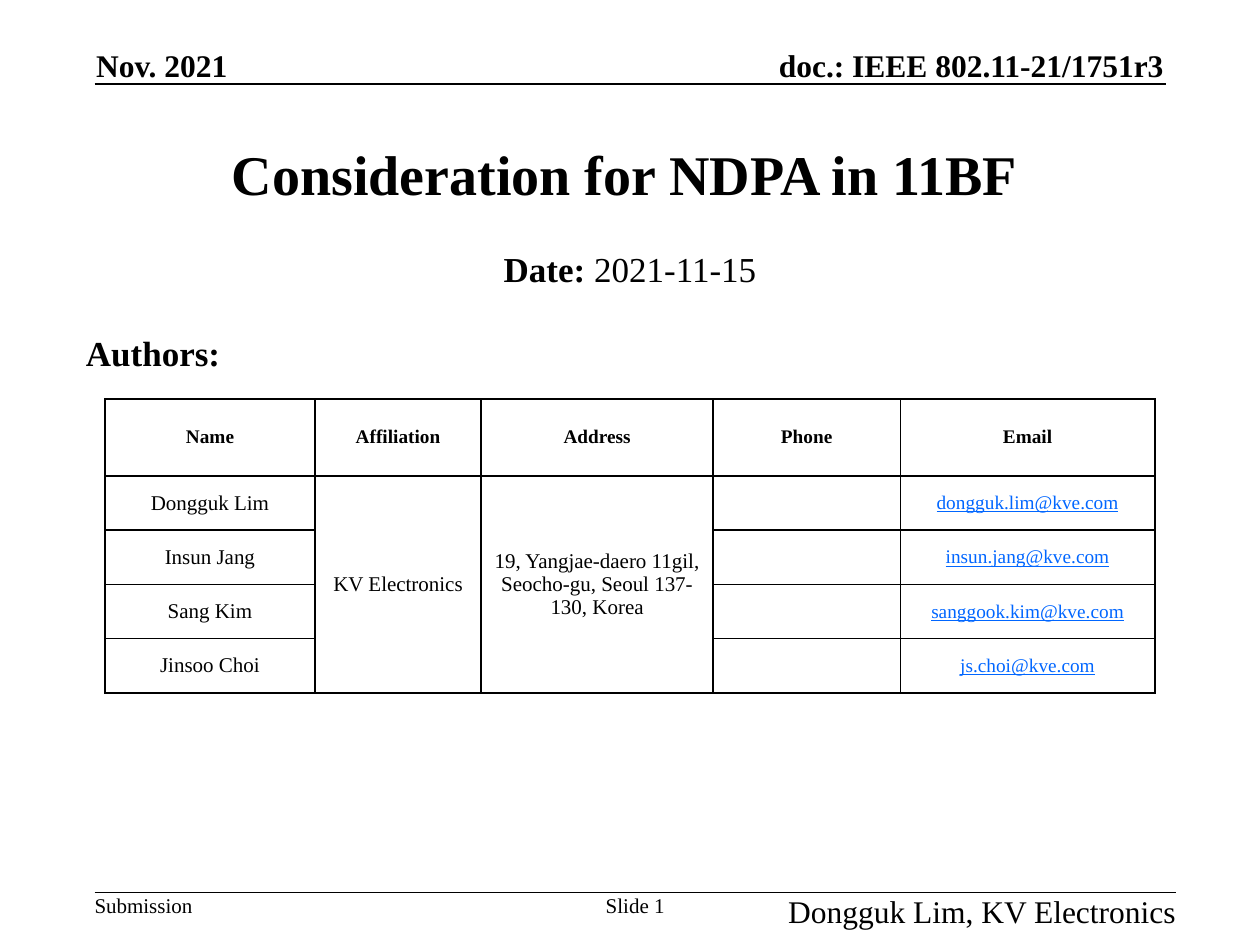
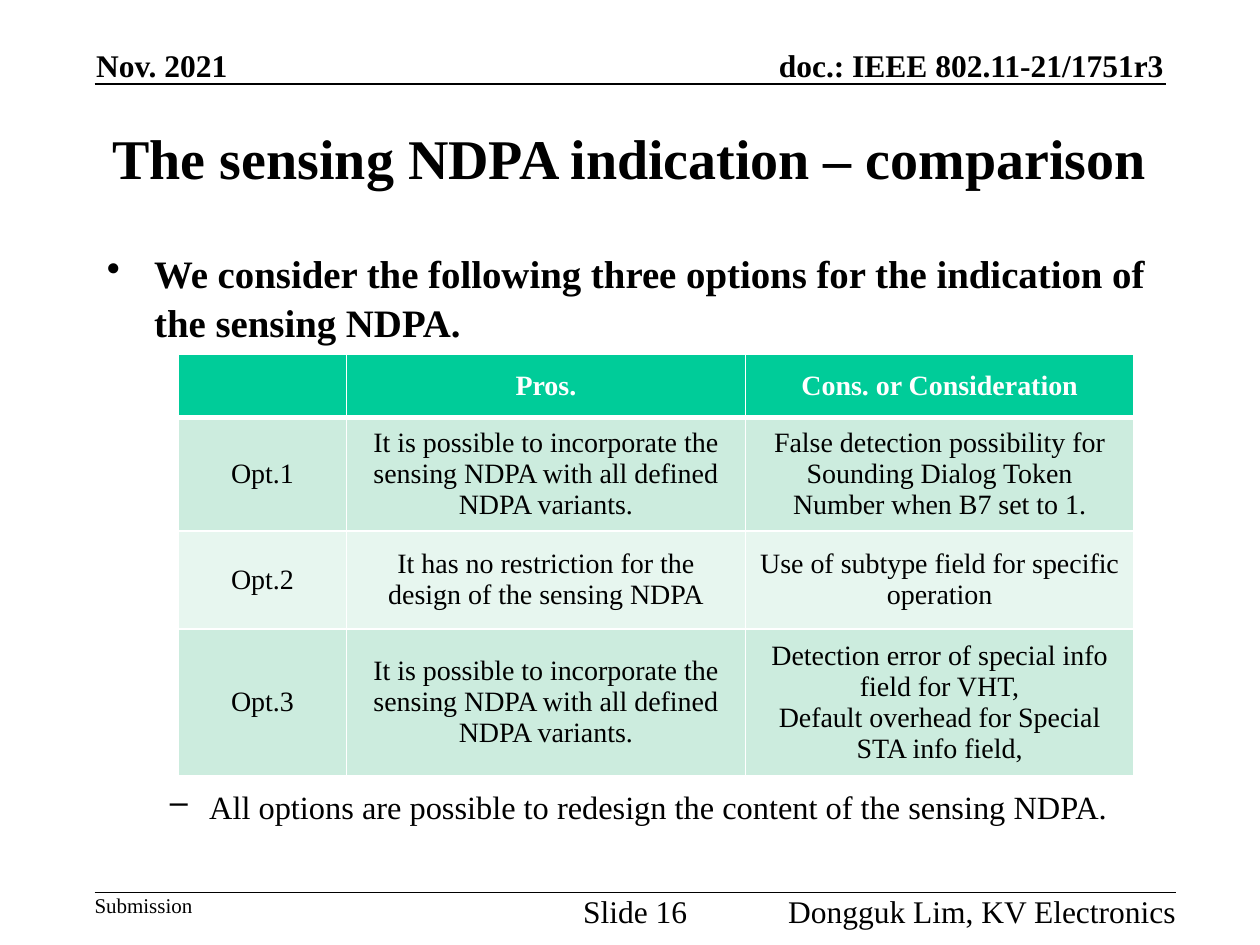
from lxml import etree
from pptx import Presentation
from pptx.dml.color import RGBColor
from pptx.enum.shapes import MSO_CONNECTOR
from pptx.enum.text import MSO_ANCHOR, PP_ALIGN
from pptx.oxml.ns import qn
from pptx.util import Pt

LEFT, CENTER, RIGHT = PP_ALIGN.LEFT, PP_ALIGN.CENTER, PP_ALIGN.RIGHT
TOP, MIDDLE, BOTTOM = MSO_ANCHOR.TOP, MSO_ANCHOR.MIDDLE, MSO_ANCHOR.BOTTOM
STRAIGHT = MSO_CONNECTOR.STRAIGHT

FONT = "Times New Roman"
BLACK, WHITE, LINK = "000000", "FFFFFF", "0066FF"
GREEN, BAND_DARK, BAND_LIGHT = "00CC99", "CCECDE", "E7F6EF"
PADDING = (7.2, 3.6)
NO_PADDING = (0, 0)

AUTHORS = [
    ("Dongguk Lim", "dongguk.lim@kve.com"),
    ("Insun Jang", "insun.jang@kve.com"),
    ("Sang Kim", "sanggook.kim@kve.com"),
    ("Jinsoo Choi", "js.choi@kve.com"),
]
AFFILIATION = "KV Electronics"
ADDRESS = "19, Yangjae-daero 11gil, Seocho-gu, Seoul 137-130, Korea"

ALL_VARIANTS = ("It is possible to incorporate the sensing NDPA "
                "with all defined NDPA variants.")
OPTIONS = [
    ("", "Pros.", "Cons. or Consideration"),
    ("Opt.1", ALL_VARIANTS,
     "False detection possibility for Sounding Dialog Token Number when B7 set to 1."),
    ("Opt.2", "It has no restriction for the design of the sensing NDPA",
     "Use of subtype field for specific operation"),
    ("Opt.3", ALL_VARIANTS,
     "Detection error of special info field for VHT,\n"
     "Default overhead for Special STA info field,"),
]


def rgb(color):
    return RGBColor.from_string(color)


def add_run(paragraph, text, size=12, bold=False, color=BLACK, underline=False):
    run = paragraph.add_run()
    run.text = text
    font = run.font
    font.name, font.size, font.bold = FONT, Pt(size), bold
    font.underline = underline
    font.color.rgb = rgb(color)


def write_text(frame, text, align=LEFT, before=0, **font):
    """Write one paragraph per line of text and return the last one."""
    for index, line in enumerate(text.split("\n")):
        paragraph = frame.add_paragraph() if index else frame.paragraphs[0]
        paragraph.alignment = align
        paragraph.space_before = Pt(before)
        add_run(paragraph, line, **font)
    return paragraph


def add_text(slide, text, box, anchor=TOP, padding=PADDING, **text_format):
    frame = slide.shapes.add_textbox(*map(Pt, box)).text_frame
    frame.word_wrap = True
    frame.vertical_anchor = anchor
    frame.margin_left = frame.margin_right = Pt(padding[0])
    frame.margin_top = frame.margin_bottom = Pt(padding[1])
    return write_text(frame, text, **text_format)


def add_bullet(slide, text, box, character, indent, hanging, **text_format):
    paragraph = add_text(slide, text, box, **text_format)
    properties = paragraph._p.get_or_add_pPr()
    properties.set("marL", str(Pt(indent)))
    properties.set("indent", str(-Pt(hanging)))
    etree.SubElement(properties, qn("a:buChar"), char=character)
    return paragraph


def add_rule(slide, left, right, top):
    rule = slide.shapes.add_connector(STRAIGHT, Pt(left), Pt(top), Pt(right), Pt(top))
    rule.line.color.rgb = rgb(BLACK)
    rule.line.width = Pt(1)
    etree.SubElement(rule._element.spPr, qn("a:effectLst"))


def add_header(slide, left=54, right=666, bottom=48):
    style = dict(anchor=BOTTOM, padding=NO_PADDING, size=18, bold=True)
    add_text(slide, "Nov. 2021", (left + 1, bottom - 22, 90, 22), **style)
    add_text(slide, "doc.: IEEE 802.11-21/1751r3",
             (right - 266, bottom - 22, 265, 22), align=RIGHT, **style)
    add_rule(slide, left, right, bottom)


def add_footer(slide, number, number_size, left=54, right=672, top=510):
    add_rule(slide, left, right, top)
    add_text(slide, "Submission", (left, top, 70, 14), padding=NO_PADDING)
    add_text(slide, f"Slide {number}", (left + 266, top, 86, 22),
             padding=NO_PADDING, align=CENTER, size=number_size)
    add_text(slide, f"Dongguk Lim, {AFFILIATION}", (right - 230, top, 230, 22),
             padding=NO_PADDING, align=RIGHT, size=18)


def add_base_slide(presentation, title, title_box, number, number_size):
    """Add a blank slide with the shared header, title and footer."""
    slide = presentation.slides.add_slide(presentation.slide_layouts[6])
    add_header(slide)
    add_text(slide, title, title_box, anchor=MIDDLE, align=CENTER, size=32, bold=True)
    add_footer(slide, number, number_size)
    return slide


def add_grid(slide, left, top, widths, heights):
    table = slide.shapes.add_table(
        len(heights), len(widths), Pt(left), Pt(top),
        Pt(sum(widths)), Pt(sum(heights))).table
    table.first_row = table.horz_banding = False
    for column, width in zip(table.columns, widths):
        column.width = Pt(width)
    for row, height in zip(table.rows, heights):
        row.height = Pt(height)
    return table


def style_cell(cell, fill, border, padding=PADDING, top=1, bottom=1):
    """Set fill, margins and border; top and bottom are border widths."""
    properties = cell._tc.get_or_add_tcPr()
    for side, width in (("L", 1), ("R", 1), ("T", top), ("B", bottom)):
        line = etree.SubElement(properties, qn(f"a:ln{side}"), w=str(Pt(width)))
        solid = etree.SubElement(line, qn("a:solidFill"))
        etree.SubElement(solid, qn("a:srgbClr"), val=border)
    cell.fill.solid()
    cell.fill.fore_color.rgb = rgb(fill)
    cell.vertical_anchor = MIDDLE
    cell.margin_left = cell.margin_right = Pt(padding[0])
    cell.margin_top = cell.margin_bottom = Pt(padding[1])


def write_cell(cell, text, **font):
    if text:
        write_text(cell.text_frame, text, align=CENTER, **font)


def add_author_table(slide, left, top):
    table = add_grid(slide, left, top, [120, 95, 132.5, 107, 145.5],
                     [44] + [31] * len(AUTHORS))
    for row_index, row in enumerate(table.rows):
        for cell in row.cells:
            style_cell(cell, WHITE, BLACK, (5, 0) if row_index else PADDING)
    for column, heading in enumerate(("Name", "Affiliation", "Address", "Phone", "Email")):
        write_cell(table.cell(0, column), heading, size=11, bold=True)
    for column, text in ((1, AFFILIATION), (2, ADDRESS)):
        table.cell(1, column).merge(table.cell(len(AUTHORS), column))
        write_cell(table.cell(1, column), text)
    for row_index, (name, email) in enumerate(AUTHORS, start=1):
        write_cell(table.cell(row_index, 0), name)
        write_cell(table.cell(row_index, 4), email, size=11, color=LINK, underline=True)


def add_option_table(slide, left, top):
    table = add_grid(slide, left, top, [96, 228, 222], [36, 60, 56, 78])
    for row_index, texts in enumerate(OPTIONS):
        is_heading = row_index == 0
        band = BAND_DARK if row_index % 2 else BAND_LIGHT
        for column, text in enumerate(texts):
            cell = table.cell(row_index, column)
            style_cell(cell, GREEN if is_heading else band, WHITE,
                       top=3 if row_index == 1 else 1, bottom=3 if is_heading else 1)
            write_cell(cell, text, size=16, bold=is_heading,
                       color=WHITE if is_heading else BLACK)


def build_title_slide(presentation):
    slide = add_base_slide(presentation, "Consideration for NDPA in 11BF",
                           (30, 54, 654, 90), number=1, number_size=12)
    date = add_text(slide, "Date:", (54, 138, 612, 30), align=CENTER,
                    before=2, size=20, bold=True)
    add_run(date, " 2021-11-15", size=20)
    add_text(slide, "Authors:", (42, 186, 114, 30), before=2, size=20, bold=True)
    add_author_table(slide, 60, 228)


def build_comparison_slide(presentation):
    slide = add_base_slide(presentation, "The sensing NDPA indication – comparison",
                           (54, 54, 612, 72), number=16, number_size=18)
    statement = add_bullet(
        slide, "We consider the following three options for the indication of "
        "the sensing NDPA.", (54, 138, 612, 62), "•", 27, 27, size=22.2, bold=True)
    statement.line_spacing = 1.05
    add_option_table(slide, 102, 202.5)
    add_bullet(slide, "All options are possible to redesign the content of the sensing NDPA.",
               (54, 446, 612, 30), "–", 58.5, 22.5, size=18.5)


def main():
    presentation = Presentation()
    presentation.slide_width, presentation.slide_height = Pt(720), Pt(540)
    build_title_slide(presentation)
    build_comparison_slide(presentation)
    presentation.save("out.pptx")


if __name__ == "__main__":
    main()
